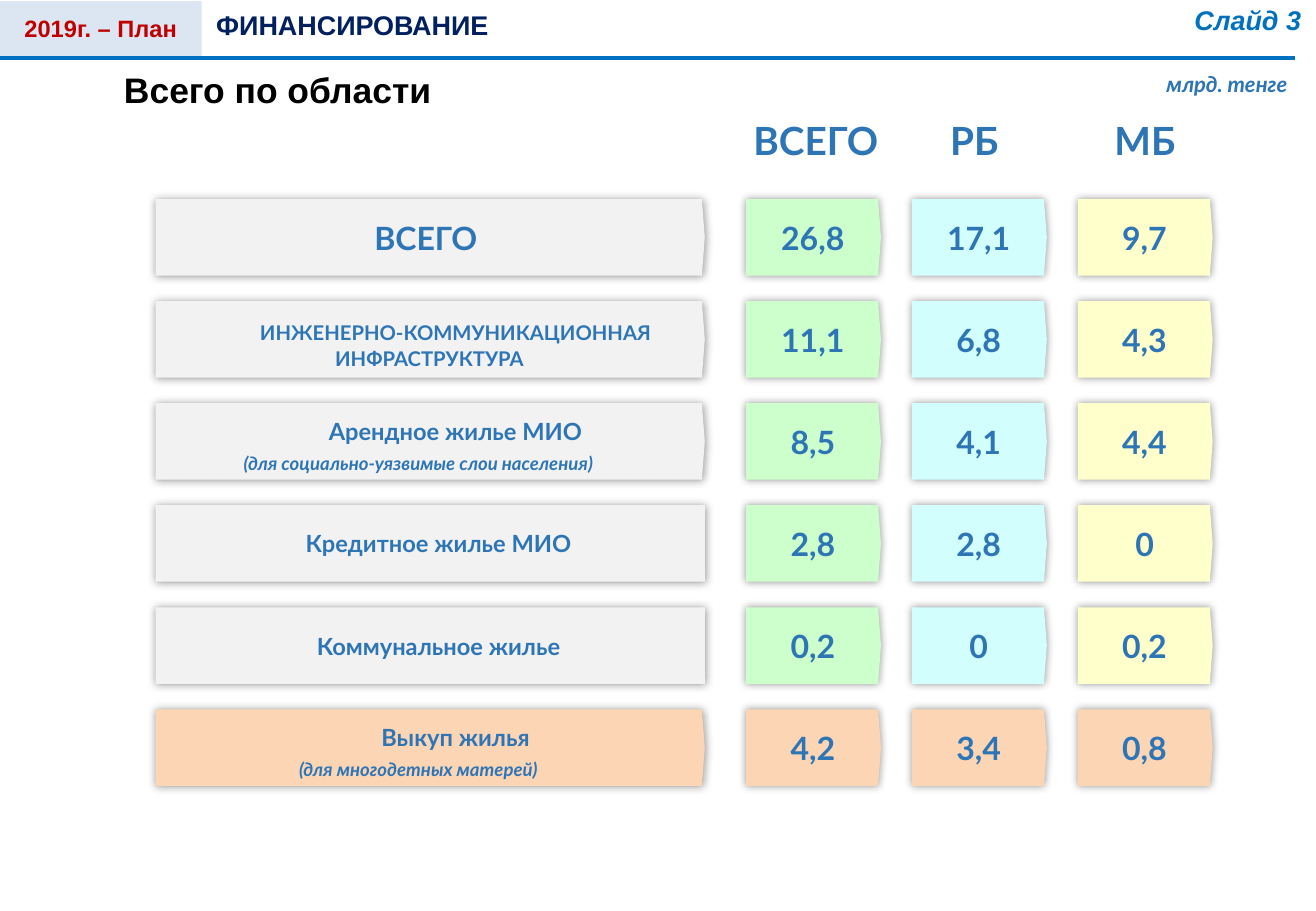
from dataclasses import dataclass

from lxml import etree
from pptx import Presentation
from pptx.dml.color import RGBColor
from pptx.enum.shapes import MSO_CONNECTOR, MSO_SHAPE
from pptx.enum.text import MSO_ANCHOR, MSO_AUTO_SIZE, PP_ALIGN
from pptx.oxml.ns import qn
from pptx.util import Inches, Pt

PLATE, ROUNDED = MSO_SHAPE.PENTAGON, MSO_SHAPE.ROUNDED_RECTANGLE
LINE = MSO_CONNECTOR.STRAIGHT
CENTER, LEFT = PP_ALIGN.CENTER, PP_ALIGN.LEFT
MIDDLE = MSO_ANCHOR.MIDDLE
FIT = MSO_AUTO_SIZE.SHAPE_TO_FIT_TEXT


@dataclass(frozen=True)
class Theme:
    head_font: str = "Arial"
    body_font: str = "Lato"
    text: str = "2E75B6"
    accent: str = "0070C0"
    navy: str = "002060"
    red: str = "C00000"
    black: str = "000000"
    tag: str = "DCE6F2"
    label: str = "F2F2F2"
    highlight: str = "FCD5B5"
    columns: tuple = ("CCFFCC", "D2FEFE", "FFFFCC")
    title: int = 21
    column_head: int = 23
    header: int = 16
    value: int = 19
    item: int = 14
    unit: int = 13
    small: int = 12
    note: int = 11


T = Theme()
WIDTH, HEIGHT = 10.83, 7.5

# Grid of the budget table, in inches
LABEL_LEFT, LABEL_WIDTH = 1.28, 4.52
COL_LEFT, COL_PITCH, COL_WIDTH = 6.14, 1.365, 1.11
ROW_TOP, ROW_PITCH, ROW_HEIGHT = 1.64, 0.84, 0.63
PLATE_POINT = 0.038
INSETS = (0.12, 0.06, 0.12, 0.06)

# Column headings: text, left, width
HEADINGS = [("ВСЕГО", 6.08, 1.3), ("РБ", 7.7, 0.67), ("МБ", 9.05, 0.75)]

# Rows: label, note, size, values
ROWS = [
    ("ВСЕГО", "", T.value, ("26,8", "17,1", "9,7")),
    ("ИНЖЕНЕРНО-КОММУНИКАЦИОННАЯ ИНФРАСТРУКТУРА", "", T.small, ("11,1", "6,8", "4,3")),
    ("Арендное жилье МИО", "(для социально-уязвимые слои населения)", T.item,
     ("8,5", "4,1", "4,4")),
    ("Кредитное жилье МИО", "", T.item, ("2,8", "2,8", "0")),
    ("Коммунальное жилье", "", T.item, ("0,2", "0", "0,2")),
    ("Выкуп жилья", "(для многодетных матерей)", T.item, ("4,2", "3,4", "0,8")),
]
FLAT_ROWS = (3, 4)
HIGHLIGHT_ROW = 5


def rgb(value):
    return RGBColor.from_string(value)


def set_insets(tf, extra=(0, 0, 0, 0)):
    left, top, right, bottom = (Inches(a + b) for a, b in zip(INSETS, extra))
    tf.margin_left, tf.margin_top = left, top
    tf.margin_right, tf.margin_bottom = right, bottom


def add_run(p, text, size, color=T.text, font=T.body_font, italic=False, align=CENTER):
    p.alignment = align
    r = p.add_run()
    r.text = text
    r.font.size, r.font.name = Pt(size), font
    r.font.bold, r.font.italic = True, italic
    r.font.color.rgb = rgb(color)


def add_text(s, text, left, top, width, height, size, color=T.text,
             font=T.body_font, italic=False):
    tf = s.shapes.add_textbox(*map(Inches, (left, top, width, height))).text_frame
    tf.word_wrap, tf.auto_size = False, FIT
    set_insets(tf)
    add_run(tf.paragraphs[0], text, size, color, font, italic, LEFT)


def add_block(s, kind, left, top, width, height, fill, point=0, extra=(0, 0, 0, 0)):
    sp = s.shapes.add_shape(kind, *map(Inches, (left, top, width, height)))
    sp.adjustments[0] = point
    sp.shadow.inherit = False
    sp.fill.solid()
    sp.fill.fore_color.rgb = rgb(fill)
    sp.line.fill.background()
    tf = sp.text_frame
    tf.word_wrap, tf.vertical_anchor = True, MIDDLE
    set_insets(tf, extra)
    return sp


def add_glow_shadow(sp):
    effects = sp._element.spPr.find(qn("a:effectLst"))
    shadow = etree.SubElement(effects, qn("a:outerShdw"), blurRad=str(Pt(5)),
                              dist="0", dir="0", algn="ctr", rotWithShape="0")
    color = etree.SubElement(shadow, qn("a:srgbClr"), val=T.black)
    etree.SubElement(color, qn("a:alpha"), val="40000")


def add_plate(s, left, row, width, fill, point=PLATE_POINT, extra=(0, 0, 0, 0)):
    top = ROW_TOP + row * ROW_PITCH
    sp = add_block(s, PLATE, left, top, width, ROW_HEIGHT, fill, point, extra)
    add_glow_shadow(sp)
    return sp.text_frame


def add_label(s, row, label, note, size, fill):
    point, extra = PLATE_POINT, (0, 0, 0.06, 0)
    if note:
        extra = (0, 0.06, 0.18, 0)
    elif size == T.small:
        extra = (0, 0.08, 0, 0)
    elif row in FLAT_ROWS:
        point, extra = 0, (0.14, 0, 0, 0)
    tf = add_plate(s, LABEL_LEFT, row, LABEL_WIDTH, fill, point, extra)
    p = tf.paragraphs[0]
    add_run(p, label, size)
    if note:
        p._p.get_or_add_pPr().set("marL", str(Inches(0.61)))
        p = tf.add_paragraph()
        p.space_before = Pt(4)
        add_run(p, note, T.note, italic=True)
    elif size == T.small:
        p._p.get_or_add_pPr().set("indent", str(Inches(0.43)))
        p.line_spacing = 1.1


def add_header(s):
    tag = add_block(s, ROUNDED, 0, 0.01, 1.66, 0.45, T.tag)
    add_run(tag.text_frame.paragraphs[0], "2019г. – План", T.item, T.red, T.head_font)
    rule = s.shapes.add_connector(LINE, 0, Inches(0.48), Inches(10.66), Inches(0.48))
    rule.line.color.rgb, rule.line.width = rgb(T.accent), Pt(2.25)
    etree.SubElement(rule._element.spPr, qn("a:effectLst"))
    add_text(s, "ФИНАНСИРОВАНИЕ", 1.66, 0.01, 2.5, 0.39, T.header, T.navy, T.head_font)
    add_text(s, "Слайд 3", 9.71, -0.03, 1.13, 0.39, T.header, T.accent, T.head_font, True)
    add_text(s, "Всего по области", 0.9, 0.5, 2.79, 0.47, T.title, T.black, T.head_font)
    add_text(s, "млрд. тенге", 9.48, 0.52, 1.36, 0.34, T.unit, italic=True)


def add_budget(s):
    for text, left, width in HEADINGS:
        add_text(s, text, left, 0.9, width, 0.51, T.column_head)
    for row, (label, note, size, values) in enumerate(ROWS):
        highlight = T.highlight if row == HIGHLIGHT_ROW else None
        add_label(s, row, label, note, size, highlight or T.label)
        for col, value in enumerate(values):
            tf = add_plate(s, COL_LEFT + col * COL_PITCH, row, COL_WIDTH,
                           highlight or T.columns[col])
            add_run(tf.paragraphs[0], value, T.value)


def main():
    prs = Presentation()
    prs.slide_width, prs.slide_height = Inches(WIDTH), Inches(HEIGHT)
    s = prs.slides.add_slide(prs.slide_layouts[6])
    add_header(s)
    add_budget(s)
    prs.save("out.pptx")


if __name__ == "__main__":
    main()
